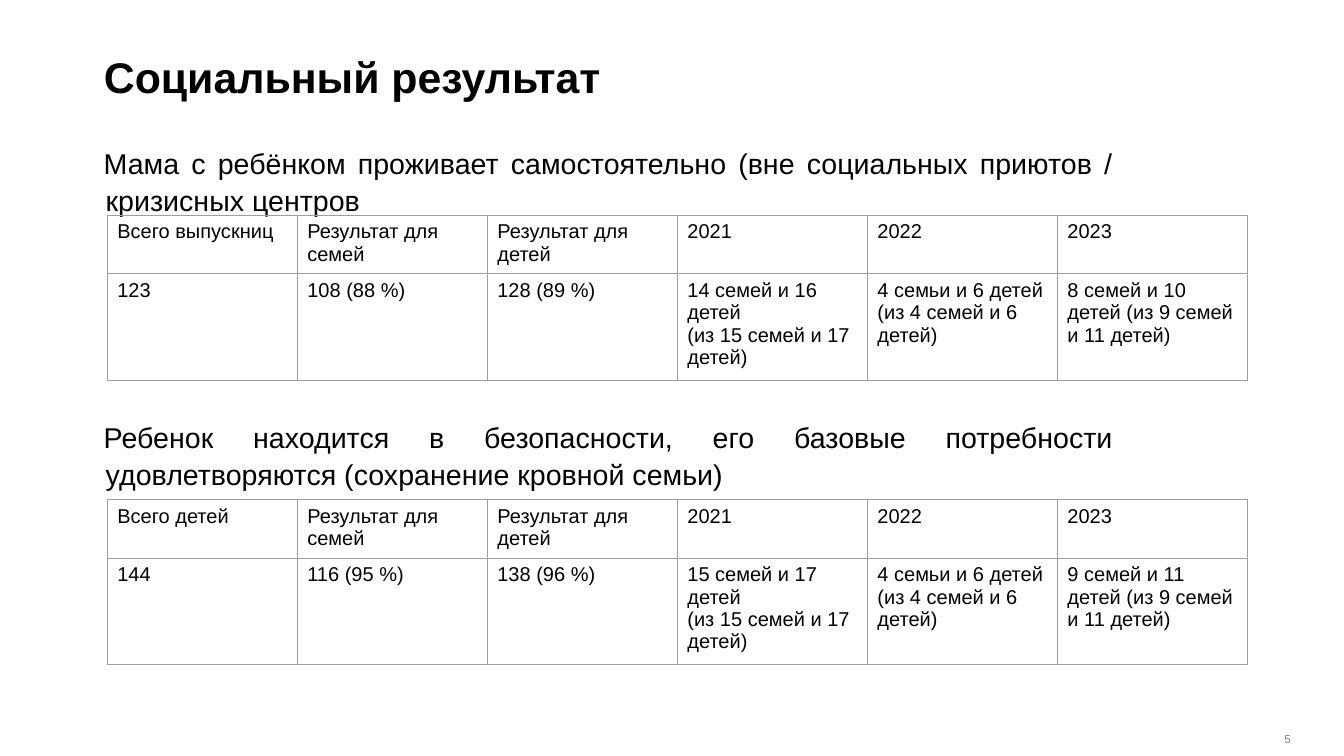
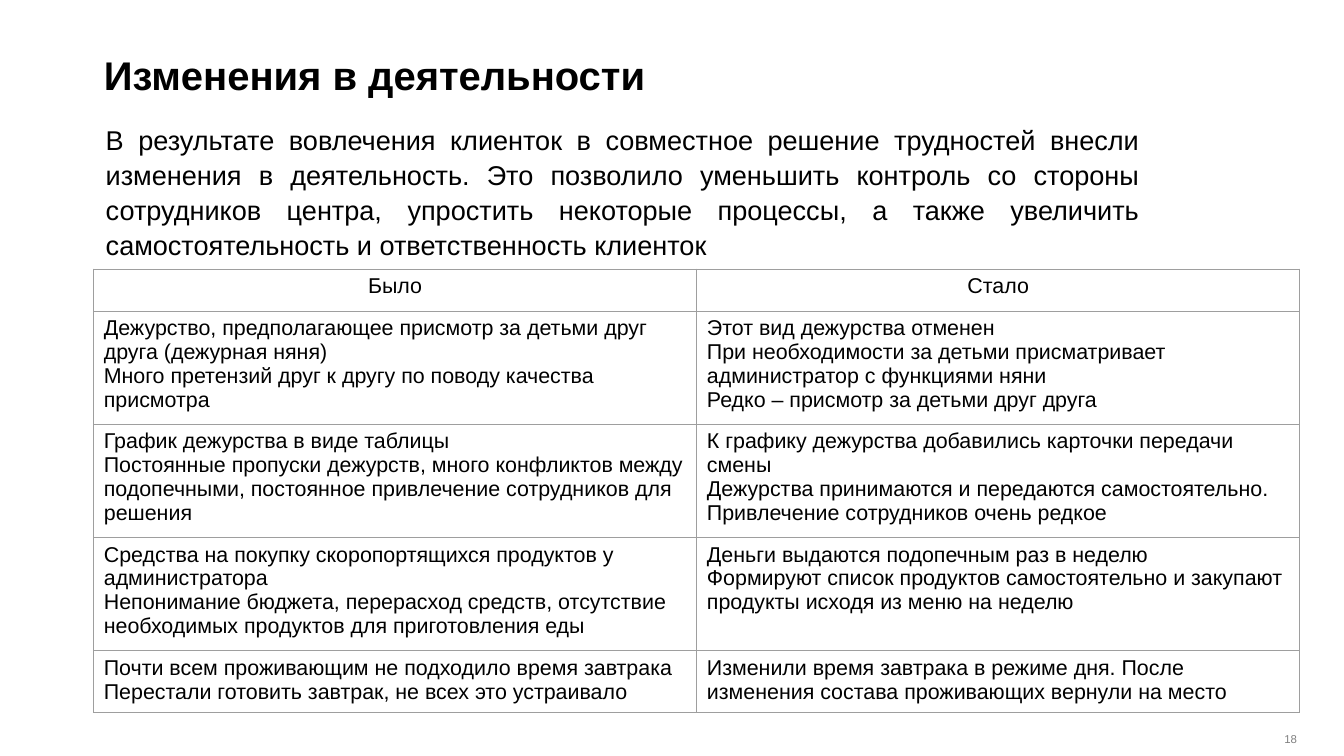
from dataclasses import dataclass

from lxml.etree import SubElement
from pptx import Presentation
from pptx.dml.color import RGBColor
from pptx.enum.text import MSO_ANCHOR, PP_ALIGN
from pptx.oxml.ns import qn
from pptx.util import Inches, Pt

RESULT_HEADS = ["Результат для семей", "Результат для детей", "2021", "2022", "2023"]

SLIDES = [
    {
        "number": "5",
        "title": "Социальный результат",
        "title_size": 30,
        "body_size": 20,
        "body_width": 80.26,
        "body_height": 10.6,
        "hanging": -0.02,
        "table_size": 14,
        "table_left": 7.96,
        "table_width": 84.85,
        "row_heights": [7.35, 13.2],
        "head_align": PP_ALIGN.LEFT,
        "sections": [
            {
                "body": "Мама с ребёнком проживает самостоятельно (вне социальных приютов / кризисных центров",
                "body_top": 18.37,
                "table_top": 28.5,
                "rows": [
                    ["Всего выпускниц", *RESULT_HEADS],
                    [
                        "123",
                        "108 (88 %)",
                        "128 (89 %)",
                        "14 семей и 16 детей\n(из 15 семей и 17 детей)",
                        "4 семьи и 6 детей (из 4 семей и 6 детей)",
                        "8 семей и 10 детей (из 9 семей и 11 детей)",
                    ],
                ],
            },
            {
                "body": "Ребенок находится в безопасности, его базовые потребности "
                        "удовлетворяются (сохранение кровной семьи)",
                "body_top": 54.56,
                "table_top": 66.12,
                "rows": [
                    ["Всего детей", *RESULT_HEADS],
                    [
                        "144",
                        "116 (95 %)",
                        "138 (96 %)",
                        "15 семей и 17 детей\n(из 15 семей и 17 детей)",
                        "4 семьи и 6 детей (из 4 семей и 6 детей)",
                        "9 семей и 11 детей (из 9 семей и 11 детей)",
                    ],
                ],
            },
        ],
    },
    {
        "number": "18",
        "title": "Изменения в деятельности",
        "title_size": 28,
        "body_size": 19,
        "body_width": 82.25,
        "body_height": 17.8,
        "hanging": 0,
        "table_size": 15,
        "table_left": 6.96,
        "table_width": 89.75,
        "row_heights": [5.58, 14.01, 14.01, 14.01, 7.69],
        "head_align": PP_ALIGN.CENTER,
        "sections": [
            {
                "body": "В результате вовлечения клиенток в совместное решение трудностей внесли "
                        "изменения в деятельность. Это позволило уменьшить контроль со стороны "
                        "сотрудников центра, упростить некоторые процессы, а также увеличить "
                        "самостоятельность и ответственность клиенток",
                "body_top": 15.37,
                "table_top": 35.6,
                "rows": [
                    ["Было", "Стало"],
                    [
                        "Дежурство, предполагающее присмотр за детьми друг друга (дежурная няня)\n"
                        "Много претензий друг к другу по поводу качества присмотра",
                        "Этот вид дежурства отменен\n"
                        "При необходимости за детьми присматривает администратор с функциями няни\n"
                        "Редко – присмотр за детьми друг друга",
                    ],
                    [
                        "График дежурства в виде таблицы\n"
                        "Постоянные пропуски дежурств, много конфликтов между подопечными, "
                        "постоянное привлечение сотрудников для решения",
                        "К графику дежурства добавились карточки передачи смены\n"
                        "Дежурства принимаются и передаются самостоятельно. "
                        "Привлечение сотрудников очень редкое",
                    ],
                    [
                        "Средства на покупку скоропортящихся продуктов у администратора\n"
                        "Непонимание бюджета, перерасход средств, отсутствие "
                        "необходимых продуктов для приготовления еды",
                        "Деньги выдаются подопечным раз в неделю\n"
                        "Формируют список продуктов самостоятельно и закупают "
                        "продукты исходя из меню на неделю",
                    ],
                    [
                        "Почти всем проживающим не подходило время завтрака\n"
                        "Перестали готовить завтрак, не всех это устраивало",
                        "Изменили время завтрака в режиме дня. "
                        "После изменения состава проживающих вернули на место",
                    ],
                ],
            },
        ],
    },
]


@dataclass(frozen=True)
class Theme:
    font: str = "Arial"
    ink: str = "000000"
    muted: str = "808080"
    border: str = "9E9E9E"
    border_width: float = 0.75
    number_size: int = 8
    title_spacing: float = 1.15
    body_spacing: float = 1.07
    body_indent: float = 0.5


T = Theme()
W, H = Inches(13.07), Inches(7.35)


def area(left, top, width, height):
    return [round(side * share / 100) for side, share in zip((W, H, W, H), (left, top, width, height))]


def write(tf, text, size, color=T.ink, bold=False, align=PP_ALIGN.LEFT, spacing=None, indent=0, hanging=0):
    for i, line in enumerate(text.split("\n")):
        p = tf.paragraphs[0] if i == 0 else tf.add_paragraph()
        p.alignment = align
        if spacing:
            p.line_spacing = spacing
        if indent:
            pPr = p._p.get_or_add_pPr()
            pPr.set("marL", str(Inches(indent)))
            pPr.set("indent", str(Inches(hanging)))
        r = p.add_run()
        r.text = line
        r.font.name, r.font.size, r.font.bold = T.font, Pt(size), bold
        r.font.color.rgb = RGBColor.from_string(color)


def add_text(s, box, text, size, inset=True, anchor=MSO_ANCHOR.TOP, **fmt):
    tf = s.shapes.add_textbox(*area(*box)).text_frame
    tf.word_wrap = True
    tf.vertical_anchor = anchor
    if not inset:
        tf.margin_left = tf.margin_right = tf.margin_top = tf.margin_bottom = 0
    write(tf, text, size, **fmt)


def add_borders(cell):
    tcPr = cell._tc.get_or_add_tcPr()
    for i, side in enumerate(("lnL", "lnR", "lnT", "lnB")):
        ln = tcPr.makeelement(qn(f"a:{side}"), {"w": str(Pt(T.border_width))})
        SubElement(SubElement(ln, qn("a:solidFill")), qn("a:srgbClr"), val=T.border)
        tcPr.insert(i, ln)


def add_grid(s, left, top, width, heights, rows, size, head_align):
    cols = len(rows[0])
    box = area(left, top, width, sum(heights))
    table = s.shapes.add_table(len(rows), cols, *box).table
    table.first_row = table.horz_banding = False
    for col in table.columns:
        col.width = box[2] // cols
    for i, (values, height) in enumerate(zip(rows, heights)):
        table.rows[i].height = round(H * height / 100)
        for j, value in enumerate(values):
            cell = table.cell(i, j)
            cell.fill.background()
            add_borders(cell)
            write(cell.text_frame, value, size, align=PP_ALIGN.LEFT if i else head_align)


def add_page(prs, page):
    s = prs.slides.add_slide(prs.slide_layouts[6])
    add_text(s, (95.56, 96.87, 1.07, 1.77), page["number"], T.number_size,
             inset=False, anchor=MSO_ANCHOR.MIDDLE, color=T.muted)
    add_text(s, (7.73, 5.71, 64, 6.4), page["title"], page["title_size"],
             inset=False, bold=True, spacing=T.title_spacing)
    for part in page["sections"]:
        add_text(s, (3.29, part["body_top"], page["body_width"], page["body_height"]),
                 part["body"], page["body_size"], align=PP_ALIGN.JUSTIFY,
                 spacing=T.body_spacing, indent=T.body_indent, hanging=page["hanging"])
        add_grid(s, page["table_left"], part["table_top"], page["table_width"],
                 page["row_heights"], part["rows"], page["table_size"], page["head_align"])


def main():
    prs = Presentation()
    prs.slide_width, prs.slide_height = W, H
    for page in SLIDES:
        add_page(prs, page)
    prs.save("out.pptx")


if __name__ == "__main__":
    main()
